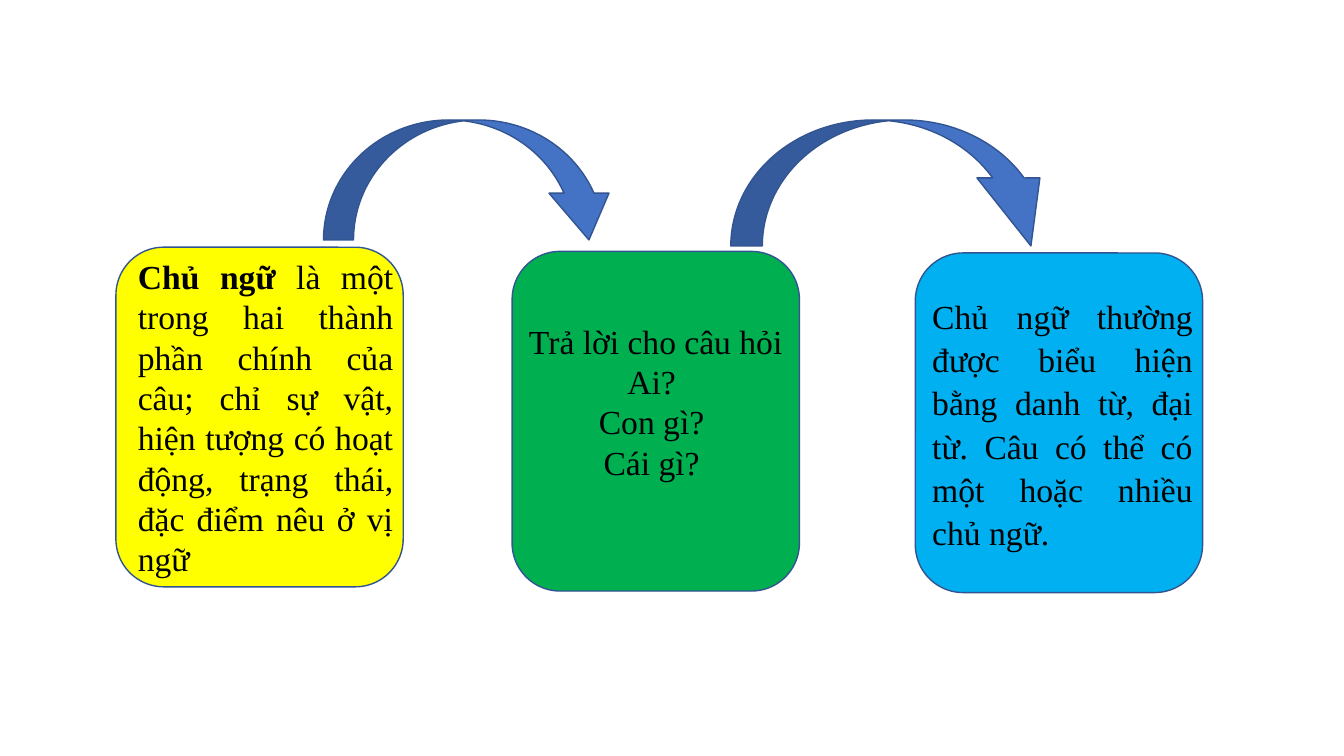
import pptx
import pptx.util
import pptx.dml.color
import pptx.enum.shapes
import pptx.enum.text

Pt = pptx.util.Pt
SHAPE = pptx.enum.shapes.MSO_SHAPE
ALIGN = pptx.enum.text.PP_ALIGN

COLORS = {"yellow": "FFFF00", "green": "00B050", "sky": "00B0F0",
          "arrow": "4472C4", "outline": "325491", "text": "000000"}
FONT, FONT_SIZE = "Times New Roman", 24
CARD_WIDTH, CARD_HEIGHT = 205.2, 242.6

# Content: each paragraph is a list of (text, bold) spans
CARDS = [
    {"fill": "yellow", "place": (82.8, 176.6), "text_box": (91.4, 179.3, 196.6, 239.8),
     "align": ALIGN.JUSTIFY, "spacing": 1.0, "after": 0,
     "paragraphs": [[("Chủ ngữ ", True),
                     ("là một trong hai thành phần chính của câu; chỉ sự vật, hiện tượng "
                      "có hoạt động, trạng thái, đặc điểm nêu ở vị ngữ", False)]]},
    {"fill": "green", "place": (365.8, 179.6), "text_box": (365.8, 225.4, 205.2, 123.8),
     "align": ALIGN.CENTER, "spacing": 1.0, "after": 0,
     "paragraphs": [[("Trả lời cho câu hỏi Ai? ", False)],
                    [("Con gì? ", False)],
                    [("Cái gì? ", False)]]},
    {"fill": "sky", "place": (653.8, 180.7), "text_box": (658.8, 205.9, 200.2, 193.7),
     "align": ALIGN.JUSTIFY, "spacing": 1.07, "after": 8,
     "paragraphs": [[("Chủ ngữ thường được biểu hiện bằng danh từ, đại từ. "
                      "Câu có thể có một hoặc nhiều chủ ngữ.", False)]]},
]
# Left, top, width, height and length of the arrowhead
ARROWS = [(231.1, 85.7, 211, 85.7, 0.39), (522, 85.7, 236.9, 90, 0.54)]


def rgb(name):
    return pptx.dml.color.RGBColor.from_string(COLORS[name])


def add_outlined(page, kind, bounds, fill):
    shape = page.shapes.add_shape(kind, *map(Pt, bounds))
    shape.shadow.inherit = False
    shape.fill.solid()
    shape.fill.fore_color.rgb = rgb(fill)
    shape.line.color.rgb = rgb("outline")
    shape.line.width = Pt(1)
    return shape


def add_text(page, card):
    box = page.shapes.add_textbox(*map(Pt, card["text_box"]))
    frame = box.text_frame
    frame.word_wrap = True
    for index, spans in enumerate(card["paragraphs"]):
        para = frame.add_paragraph() if index else frame.paragraphs[0]
        para.alignment = card["align"]
        para.line_spacing = card["spacing"]
        para.space_after = Pt(card["after"])
        para.font.name = FONT
        para.font.size = Pt(FONT_SIZE)
        para.font.color.rgb = rgb("text")
        for text, bold in spans:
            span = para.add_run()
            span.text = text
            span.font.bold = bold


def main():
    deck = pptx.Presentation()
    deck.slide_width, deck.slide_height = Pt(960), Pt(540)
    page = deck.slides.add_slide(deck.slide_layouts[6])

    # Cards, from right to left
    for card in reversed(CARDS):
        add_outlined(page, SHAPE.ROUNDED_RECTANGLE,
                     (*card["place"], CARD_WIDTH, CARD_HEIGHT), card["fill"])

    # Curved arrows between the cards
    for *bounds, head in ARROWS:
        arrow = add_outlined(page, SHAPE.CURVED_DOWN_ARROW, bounds, "arrow")
        for index, value in enumerate((0.25, 0.5, head)):
            arrow.adjustments[index] = value

    # Text on the cards
    for card in CARDS:
        add_text(page, card)

    deck.save("out.pptx")


if __name__ == "__main__":
    main()
